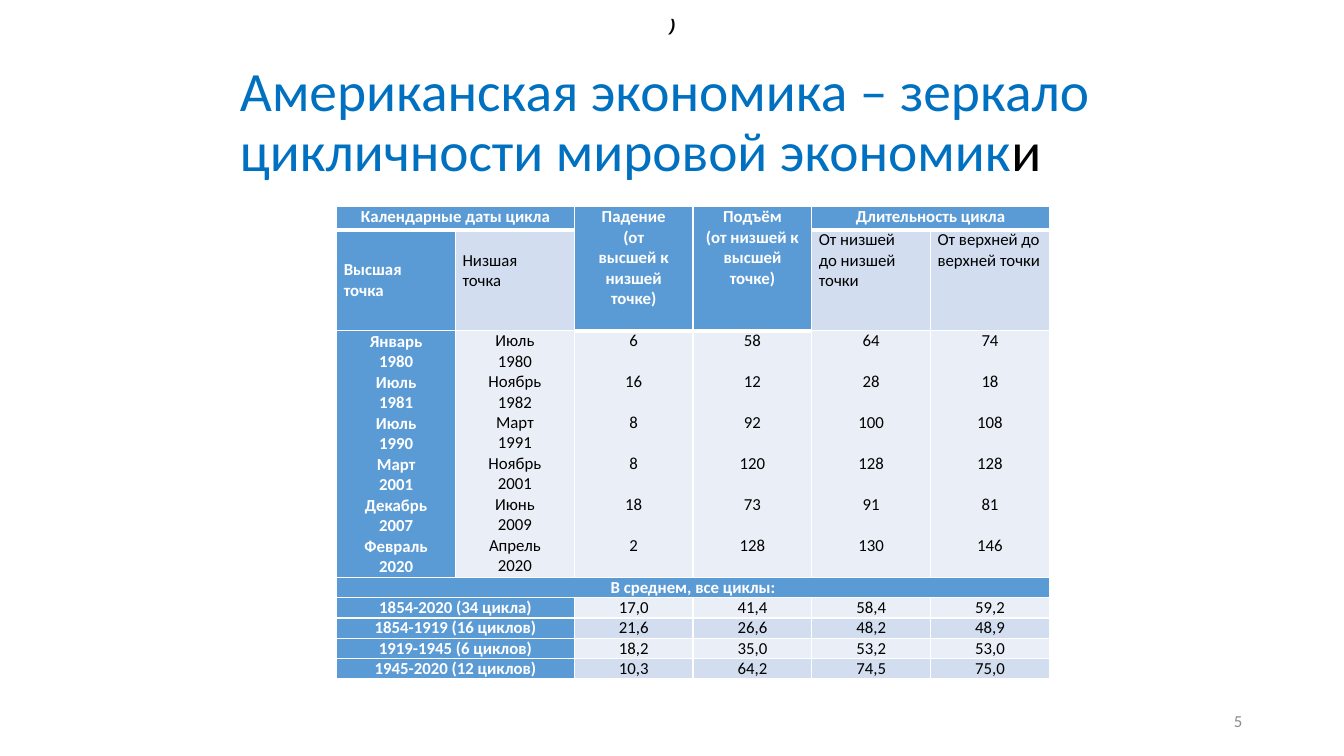
from dataclasses import dataclass

from lxml.etree import SubElement
from pptx import Presentation
from pptx.dml.color import RGBColor
from pptx.enum.text import MSO_ANCHOR, MSO_AUTO_SIZE, PP_ALIGN
from pptx.oxml.ns import qn
from pptx.util import Inches, Pt


@dataclass(frozen=True)
class Theme:
    font: str = "Calibri"
    mark_font: str = "Arial"
    title: str = "0070C0"
    ink: str = "000000"
    paper: str = "FFFFFF"
    muted: str = "8C8C8C"
    header: str = "5B9BD5"
    band_dark: str = "D2DEEF"
    band_light: str = "EAEFF7"
    title_size: float = 39.6
    body_size: float = 12
    line_step: float = 14.65


THEME = Theme()
COLUMN_WIDTH = 7.07 / 6
ROW_HEIGHTS = [0.23, 0.79, 2.45] + [0.2] * 5
CELL_INSET = 0.07

HEADINGS = {
    (0, 0): "Календарные даты цикла",
    (0, 2): "Падение\n(от\nвысшей к\nнизшей\nточке)",
    (0, 3): "Подъём\n(от низшей к высшей точке)",
    (0, 4): "Длительность цикла",
}
SUBHEADINGS = {
    (1, 0): "Высшая\nточка",
    (1, 1): "Низшая\nточка",
    (1, 4): "От низшей\nдо низшей\nточки",
    (1, 5): "От верхней до верхней точки",
}
CYCLES = [
    ("Январь\n1980", "Июль\n1980", 6, 58, 64, 74),
    ("Июль\n1981", "Ноябрь\n1982", 16, 12, 28, 18),
    ("Июль\n1990", "Март\n1991", 8, 92, 100, 108),
    ("Март\n2001", "Ноябрь\n2001", 8, 120, 128, 128),
    ("Декабрь\n2007", "Июнь\n2009", 18, 73, 91, 81),
    ("Февраль\n2020", "Апрель\n2020", 2, 128, 130, 146),
]
AVERAGES = [
    ("1854-2020 (34 цикла)", "17,0", "41,4", "58,4", "59,2"),
    ("1854-1919 (16 циклов)", "21,6", "26,6", "48,2", "48,9"),
    ("1919-1945 (6 циклов)", "18,2", "35,0", "53,2", "53,0"),
    ("1945-2020 (12 циклов)", "10,3", "64,2", "74,5", "75,0"),
]
MERGES = [((0, 0), (0, 1)), ((0, 2), (1, 2)), ((0, 3), (1, 3)),
          ((0, 4), (0, 5)), ((3, 0), (3, 5))]
MERGES += [((row, 0), (row, 1)) for row in range(4, 8)]


def style_font(font, color, size=THEME.body_size, name=THEME.font, bold=False, italic=False):
    font.name, font.size, font.bold, font.italic = name, Pt(size), bold, italic
    font.color.rgb = RGBColor.from_string(color)


def add_title(slide, box):
    title = slide.shapes.title
    title.left, title.top, title.width, title.height = map(Inches, box)
    frame = title.text_frame
    frame.word_wrap = True
    frame.auto_size = MSO_AUTO_SIZE.NONE
    frame.vertical_anchor = MSO_ANCHOR.MIDDLE
    heading = frame.paragraphs[0]
    heading.alignment = PP_ALIGN.LEFT
    heading.line_spacing = 0.9
    wording = [("Американская экономика – зеркало цикличности мировой экономик", THEME.title),
               ("и", THEME.ink)]
    for words, color in wording:
        run = heading.add_run()
        run.text = words
        style_font(run.font, color, THEME.title_size)


def add_label(slide, box, words, alignment, wrap, **style):
    label = slide.shapes.add_textbox(*map(Inches, box)).text_frame
    label.word_wrap = wrap
    label.vertical_anchor = MSO_ANCHOR.MIDDLE
    label.text = words
    label.paragraphs[0].alignment = alignment
    style_font(label.paragraphs[0].font, **style)


def draw_borders(cell, bottom):
    properties = cell._tc.get_or_add_tcPr()
    for side, points in (("L", 1), ("R", 1), ("T", 1), ("B", bottom)):
        line = SubElement(properties, qn(f"a:ln{side}"), w=str(Pt(points)))
        fill = SubElement(line, qn("a:solidFill"))
        SubElement(fill, qn("a:srgbClr"), val=THEME.paper)


def fill_cell(cell, words, fill, heading, alignment=PP_ALIGN.CENTER, gap=0):
    cell.fill.solid()
    cell.fill.fore_color.rgb = RGBColor.from_string(fill)
    cell.text = words
    for index, paragraph in enumerate(cell.text_frame.paragraphs):
        paragraph.alignment = alignment
        if index and gap:
            paragraph.space_before = Pt(gap)
        style_font(paragraph.font, THEME.paper if heading else THEME.ink, bold=heading)


def fill_headings(table):
    for place, words in HEADINGS.items():
        fill_cell(table.cell(*place), words, THEME.header, True)
    for (row, column), words in SUBHEADINGS.items():
        heading = column == 0
        fill_cell(table.cell(row, column), words,
                  THEME.header if heading else THEME.band_dark, heading, PP_ALIGN.LEFT)
    table.cell(1, 0).vertical_anchor = MSO_ANCHOR.MIDDLE
    table.cell(1, 1).margin_top = Pt(THEME.line_step)


def fill_cycles(table):
    for column, entries in enumerate(zip(*CYCLES)):
        heading = column == 0
        fill_cell(table.cell(2, column), "\n".join(map(str, entries)),
                  THEME.header if heading else THEME.band_light, heading,
                  gap=THEME.line_step if column > 1 else 0)
    table.cell(2, 0).vertical_anchor = MSO_ANCHOR.MIDDLE


def fill_averages(table):
    fill_cell(table.cell(3, 0), "В среднем, все циклы:", THEME.header, True)
    for row, (period, *values) in enumerate(AVERAGES, 4):
        fill_cell(table.cell(row, 0), period, THEME.header, True)
        band = THEME.band_dark if row % 2 else THEME.band_light
        for column, value in enumerate(values, 2):
            fill_cell(table.cell(row, column), value, band, False)


def add_cycle_table(slide, left, top):
    box = (left, top, COLUMN_WIDTH * 6, sum(ROW_HEIGHTS))
    table = slide.shapes.add_table(len(ROW_HEIGHTS), 6, *map(Inches, box)).table
    table.first_row = table.horz_banding = False
    for column in table.columns:
        column.width = Inches(COLUMN_WIDTH)
    for row, height in enumerate(ROW_HEIGHTS):
        table.rows[row].height = Inches(height)
        for column in range(6):
            cell = table.cell(row, column)
            cell.margin_left = cell.margin_right = Inches(CELL_INSET)
            cell.margin_top = cell.margin_bottom = 0
            under_heading = row == 0 or (row == 1 and column in (2, 3))
            draw_borders(cell, 3 if under_heading else 1)
            fill_cell(cell, "", THEME.header, True)
    for first, last in MERGES:
        table.cell(*first).merge(table.cell(*last))
    fill_headings(table)
    fill_cycles(table)
    fill_averages(table)


def build_cycle_slide(presentation):
    slide = presentation.slides.add_slide(presentation.slide_layouts[5])
    add_title(slide, (2.28, 0.6, 10.27, 1.25))
    add_label(slide, (9.42, 6.95, 3, 0.4), "5", PP_ALIGN.RIGHT, True, color=THEME.muted)
    add_cycle_table(slide, 3.34, 2.05)
    add_label(slide, (6.54, 0.1, 0.26, 0.3), ")", PP_ALIGN.CENTER, False,
              color=THEME.ink, name=THEME.mark_font, bold=True, italic=True)


def main():
    presentation = Presentation()
    presentation.slide_width = Inches(13.33)
    presentation.slide_height = Inches(7.5)
    build_cycle_slide(presentation)
    presentation.save("out.pptx")


if __name__ == "__main__":
    main()
